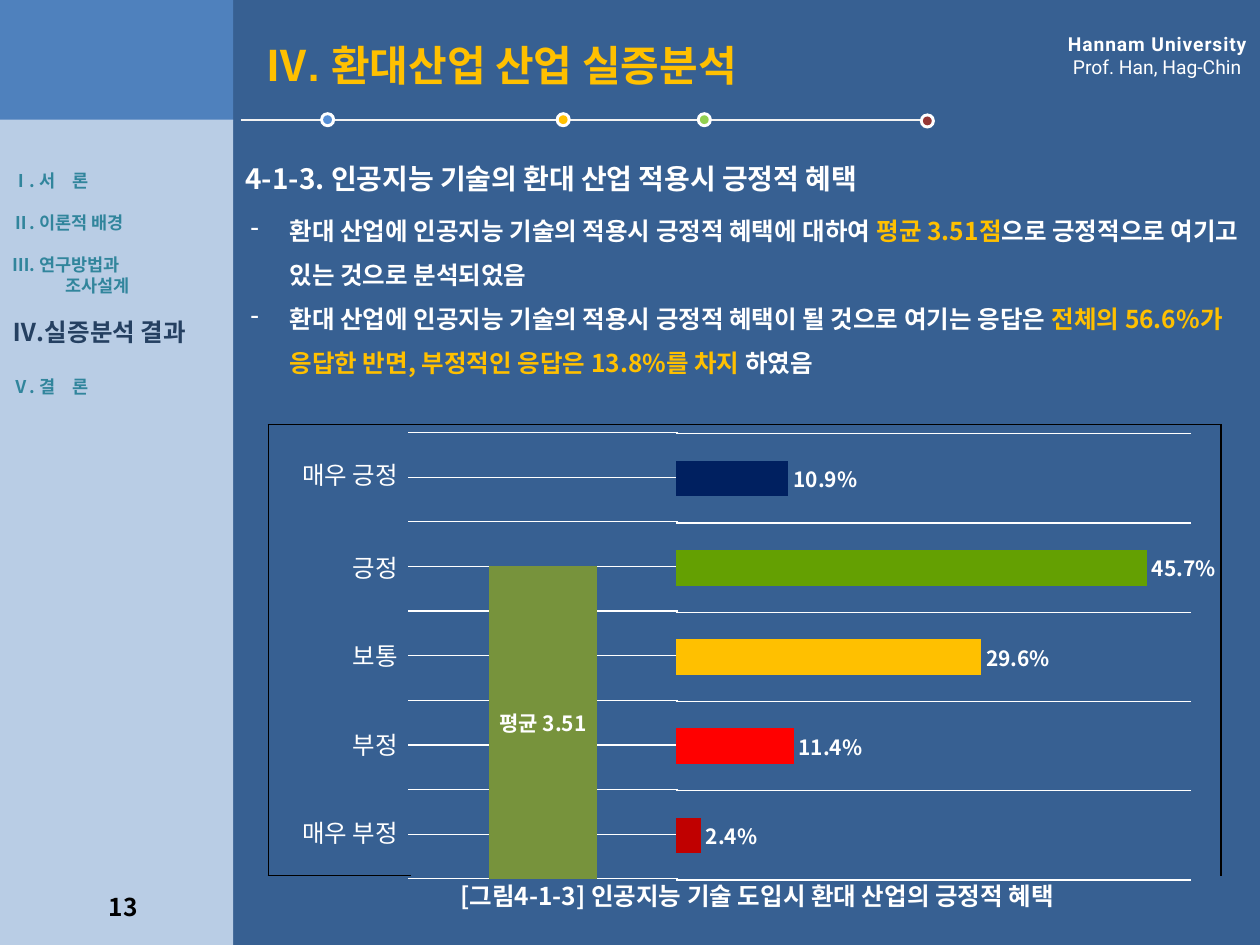
from dataclasses import dataclass

from lxml.etree import SubElement
from pptx import Presentation
from pptx.chart.data import CategoryChartData
from pptx.dml.color import RGBColor
from pptx.enum.chart import XL_CHART_TYPE, XL_LABEL_POSITION
from pptx.enum.shapes import MSO_CONNECTOR, MSO_SHAPE
from pptx.enum.text import MSO_ANCHOR, MSO_AUTO_SIZE, PP_ALIGN
from pptx.oxml import parse_xml
from pptx.oxml.ns import nsdecls, qn
from pptx.util import Inches, Pt

KOREAN = "Noto Sans CJK KR"
WHITE = "FFFFFF"
GOLD = "FFC000"
TEAL = "31859C"
BLACK = "000000"


@dataclass
class Piece:
    text: str
    size: float = 14
    color: str = WHITE
    bold: bool = True
    font: str = KOREAN
    spacing: int = 0


@dataclass
class MenuItem:
    text: str
    gap: float = 12
    size: float = 10
    color: str = TEAL
    left: float = 0.38
    hanging: float = -0.38


@dataclass
class Dot:
    x: float
    y: float
    color: str


@dataclass
class Answer:
    label: str
    share: float
    color: str


MENU = [
    MenuItem("Ⅰ. 서　론", gap=0),
    MenuItem("Ⅱ. 이론적 배경"),
    MenuItem("Ⅲ. 연구방법과"),
    MenuItem("조사설계", gap=0, left=0.42, hanging=0),
    MenuItem("Ⅳ.실증분석 결과", size=14, color="254061"),
    MenuItem("Ⅴ. 결　론", gap=17),
]
DOTS = [Dot(4.47, 0.95, GOLD), Dot(2.6, 0.95, "558ED5"),
        Dot(5.59, 0.95, "92D050"), Dot(7.36, 0.96, "953735")]
ANSWERS = [
    Answer("매우 긍정", 0.109, "002060"),
    Answer("긍정", 0.457, "64A002"),
    Answer("보통", 0.296, GOLD),
    Answer("부정", 0.114, "FF0000"),
    Answer("매우 부정", 0.024, "C00000"),
]
FINDINGS = [
    [Piece("환대 산업에 인공지능 기술의 적용시 긍정적 혜택에 대하여 "),
     Piece("평균 3.51점", color=GOLD),
     Piece("으로 긍정적으로 여기고 있는 것으로 분석되었음")],
    [Piece("환대 산업에 인공지능 기술의 적용시 긍정적 혜택이 될 것으로 여기는 응답은 "),
     Piece("전체의 56.6%가 응답한 반면, 부정적인 응답은 13.8%를 차지 ", color=GOLD),
     Piece("하였음")],
]


def rgb(value: str) -> RGBColor:
    return RGBColor.from_string(value)


def box(left: float, top: float, width: float, height: float) -> tuple:
    return Inches(left), Inches(top), Inches(width), Inches(height)


def add_run(paragraph, piece: Piece) -> None:
    run = paragraph.add_run()
    run.text = piece.text
    run.font.size = Pt(piece.size)
    run.font.bold = piece.bold
    run.font.color.rgb = rgb(piece.color)
    run.font.name = piece.font
    properties = run.font._element
    SubElement(properties, qn("a:ea")).set("typeface", piece.font)
    if piece.spacing:
        properties.set("spc", str(piece.spacing))


def fill_text(frame, lines: list, align=PP_ALIGN.LEFT, anchor=MSO_ANCHOR.TOP) -> list:
    frame.word_wrap = True
    frame.auto_size = MSO_AUTO_SIZE.NONE
    frame.vertical_anchor = anchor
    for index, pieces in enumerate(lines):
        paragraph = frame.add_paragraph() if index else frame.paragraphs[0]
        paragraph.alignment = align
        for piece in pieces:
            add_run(paragraph, piece)
    return list(frame.paragraphs)


def add_text(slide, place: tuple, lines: list, **options) -> list:
    return fill_text(slide.shapes.add_textbox(*place).text_frame, lines, **options)


def set_indent(paragraph, left: float, hanging: float, bullet: str = "") -> None:
    properties = paragraph._p.get_or_add_pPr()
    properties.set("marL", str(Inches(left)))
    properties.set("indent", str(Inches(hanging)))
    if bullet:
        SubElement(properties, qn("a:buChar")).set("char", bullet)


def add_filled(slide, kind, place: tuple, color: str) -> None:
    shape = slide.shapes.add_shape(kind, *place)
    shape.shadow.inherit = False
    shape.fill.solid()
    shape.fill.fore_color.rgb = rgb(color)
    shape.line.fill.background()


def add_dot(slide, dot: Dot) -> None:
    for size, color in ((0.12, WHITE), (0.07, dot.color)):
        place = box(dot.x - size / 2, dot.y - size / 2, size, size)
        add_filled(slide, MSO_SHAPE.OVAL, place, color)


def set_borders(cell, sides: list) -> None:
    properties = cell._tc.get_or_add_tcPr()
    for position, side in enumerate(s for s in ("L", "R", "T", "B") if s in sides):
        properties.insert(position, parse_xml(
            f'<a:ln{side} {nsdecls("a")} w="12700"><a:solidFill>'
            f'<a:srgbClr val="{BLACK}"/></a:solidFill></a:ln{side}>'))


def add_answer_table(slide) -> None:
    widths, heights = [1.13, 2.32, 4.11], [0.78, 0.7, 0.7, 0.7, 0.7]
    last_row, last_column = len(heights) - 1, len(widths) - 1
    frame = slide.shapes.add_table(len(heights), len(widths), *box(2.13, 3.37, 7.56, 3.58))
    table = frame.table
    table.first_row = table.horz_banding = False
    table._tbl.tblPr.find(qn("a:tableStyleId")).text = "{2D5ABB26-0587-4C30-8999-92F81FD0307C}"
    for column, width in zip(table.columns, widths):
        column.width = Inches(width)
    for row_index, height in enumerate(heights):
        table.rows[row_index].height = Inches(height)
        for column_index in range(len(widths)):
            cell = table.cell(row_index, column_index)
            cell.fill.background()
            edges = {"L": column_index == 0, "R": column_index == last_column,
                     "T": row_index == 0, "B": row_index == last_row}
            set_borders(cell, [side for side, outer in edges.items() if outer])
        cell = table.cell(row_index, 0)
        cell.vertical_anchor = MSO_ANCHOR.MIDDLE
        paragraph = cell.text_frame.paragraphs[0]
        paragraph.alignment = PP_ALIGN.RIGHT
        add_run(paragraph, Piece(ANSWERS[row_index].label, bold=False))
    for column_index in range(1, len(widths)):
        table.cell(0, column_index).merge(table.cell(last_row, column_index))


def add_bars(slide, kind, place: tuple, name: str, answers: list, plot_width: float,
             maximum: float, step: float, number_format: str):
    data = CategoryChartData()
    data.categories = [str(number) for number in range(1, len(answers) + 1)]
    data.add_series(name, [answer.share for answer in answers])
    chart = slide.shapes.add_chart(kind, *place, data).chart
    chart.has_legend = chart.has_title = False
    chart.font.size = Pt(10)
    chart.font.name = KOREAN
    chart.font.color.rgb = rgb(BLACK)
    chart.value_axis.minimum_scale = 0
    chart.value_axis.maximum_scale = maximum
    chart.value_axis.major_unit = step
    for axis in (chart.category_axis, chart.value_axis):
        axis.has_major_gridlines = False
        axis.visible = False
    plot = chart.plots[0]
    plot.gap_width = 150
    plot.vary_by_categories = False
    for index, answer in enumerate(answers):
        fill = plot.series[0].points[index].format.fill
        fill.solid()
        fill.fore_color.rgb = rgb(answer.color)
    plot.has_data_labels = True
    labels = plot.data_labels
    labels.show_value = True
    labels.number_format = number_format
    labels.number_format_is_linked = False
    labels.font.size = Pt(12)
    labels.font.bold = True
    labels.font.name = KOREAN
    labels.font.color.rgb = rgb(WHITE)
    area = chart._chartSpace.chart.plotArea
    for old in area.findall(qn("c:layout")):
        area.remove(old)
    sizes = {"x": 0.02, "y": 0.02, "w": plot_width, "h": 0.96}
    area.insert(0, parse_xml(
        f'<c:layout {nsdecls("c")}><c:manualLayout><c:layoutTarget val="inner"/>'
        '<c:xMode val="edge"/><c:yMode val="edge"/>'
        + "".join(f'<c:{key} val="{value}"/>' for key, value in sizes.items())
        + "</c:manualLayout></c:layout>"))
    return chart


def add_gridlines(axis) -> None:
    axis.has_major_gridlines = True
    axis.major_gridlines.format.line.color.rgb = rgb(WHITE)
    axis.major_gridlines.format.line.width = Pt(0.75)


def add_charts(slide) -> None:
    average = add_bars(slide, XL_CHART_TYPE.COLUMN_CLUSTERED, box(3.19, 3.36, 2.24, 3.69),
                       "평균", [Answer("평균", 3.51, "77933C")], 0.96, 5, 0.5, "General")
    add_gridlines(average.value_axis)
    average.plots[0].overlap = 22
    labels = average.plots[0].data_labels
    labels.show_series_name = True
    labels.position = XL_LABEL_POSITION.CENTER
    separator = parse_xml(f'<c:separator {nsdecls("c")}> </c:separator>')
    labels._element.find(qn("c:showBubbleSize")).addnext(separator)
    shares = add_bars(slide, XL_CHART_TYPE.BAR_CLUSTERED, box(5.28, 3.37, 4.37, 3.69),
                      "Series 1", ANSWERS[::-1], 0.94, 0.5, 0.1, "0.0%")
    add_gridlines(shares.category_axis)
    shares.plots[0].data_labels.position = XL_LABEL_POSITION.OUTSIDE_END


def add_frame(slide) -> None:
    add_filled(slide, MSO_SHAPE.RECTANGLE, box(1.85, 0, 8.15, 7.5), "376092")
    add_filled(slide, MSO_SHAPE.RECTANGLE, box(0, 0, 1.85, 0.96), "4F81BD")
    add_filled(slide, MSO_SHAPE.RECTANGLE, box(0, 0.95, 1.85, 6.55), "B9CDE5")
    add_text(slide, box(0.7, 7.03, 0.56, 0.31), [[Piece("13", color=BLACK)]],
             align=PP_ALIGN.CENTER)
    add_text(slide, box(8.11, 0.21, 2.15, 0.47),
             [[Piece("Hannam University", 11, font="Roboto", spacing=50)],
              [Piece("Prof. Han, Hag-Chin", 11, bold=False, font="Roboto")]],
             align=PP_ALIGN.CENTER)
    line = slide.shapes.add_connector(MSO_CONNECTOR.STRAIGHT, Inches(1.91), Inches(0.95),
                                      Inches(7.34), Inches(0.95))
    line.line.color.rgb = rgb("F2F2F2")
    line.line.width = Pt(1.25)
    SubElement(line._element.spPr, qn("a:effectLst"))
    for dot in DOTS:
        add_dot(slide, dot)


def add_menu(slide) -> None:
    lines = [[Piece(item.text, item.size, item.color)] for item in MENU]
    paragraphs = add_text(slide, box(0, 0.99, 1.85, 2.52), lines, anchor=MSO_ANCHOR.MIDDLE)
    for paragraph, item in zip(paragraphs, MENU):
        set_indent(paragraph, item.left, item.hanging)
        if item.gap:
            paragraph.space_before = Pt(item.gap)


def add_title(slide) -> None:
    title = slide.shapes.title
    title.left, title.top, title.width, title.height = box(2.01, 0.26, 5.43, 0.5)
    fill_text(title.text_frame, [[
        Piece("Ⅳ", 24, GOLD, font="Noto Sans CJK JP"),
        Piece(". ", 24, GOLD, font="Arial"),
        Piece("환대산업 산업 실증분석", 24, GOLD)]], anchor=MSO_ANCHOR.MIDDLE)
    title._element.getparent().append(title._element)


def main() -> None:
    presentation = Presentation()
    presentation.slide_width, presentation.slide_height = Inches(10), Inches(7.5)
    slide = presentation.slides.add_slide(presentation.slide_layouts[5])
    add_frame(slide)
    add_menu(slide)
    add_text(slide, box(1.85, 1.23, 8.15, 0.37),
             [[Piece("4-1-3. 인공지능 기술의 환대 산업 적용시 긍정적 혜택", 16)]])
    add_title(slide)
    add_answer_table(slide)
    add_charts(slide)
    add_text(slide, box(2.23, 6.95, 7.56, 0.31),
             [[Piece("[그림4-1-3] 인공지능 기술 도입시 환대 산업의 긍정적 혜택")]],
             align=PP_ALIGN.CENTER, anchor=MSO_ANCHOR.MIDDLE)
    for paragraph in add_text(slide, box(1.89, 1.55, 8.11, 1.65), FINDINGS):
        set_indent(paragraph, 0.31, -0.31, "-")
        paragraph.line_spacing = 1.5
    presentation.save("out.pptx")


if __name__ == "__main__":
    main()
